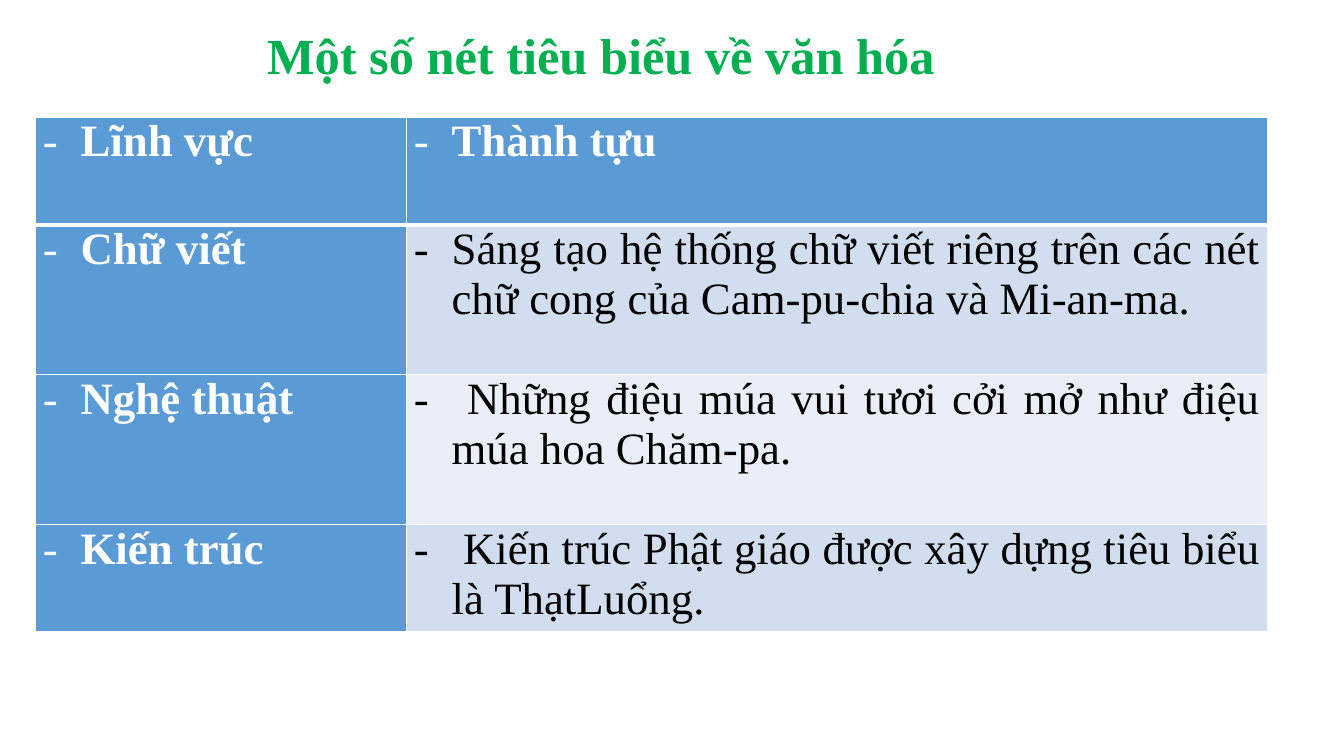
"""Build a slide with a table of cultural achievements."""
from lxml import etree
from pptx import Presentation
from pptx import util as u
from pptx.dml.color import RGBColor
from pptx.enum import text
from pptx.oxml import ns

GREEN = RGBColor(0x00, 0xB0, 0x50)
WHITE = RGBColor(0xFF, 0xFF, 0xFF)
BLACK = RGBColor(0x00, 0x00, 0x00)
BLUE = RGBColor(0x5B, 0x9B, 0xD5)
BANDS = (RGBColor(0xD2, 0xDE, 0xEF), RGBColor(0xEA, 0xEF, 0xF7))

TITLE = "Một số nét tiêu biểu về văn hóa"
ROWS = (
    ("Lĩnh vực", "Thành tựu"),
    ("Chữ viết", "Sáng tạo hệ thống chữ viết riêng trên các nét chữ cong của Cam-pu-chia và Mi-an-ma."),
    ("Nghệ thuật", " Những điệu múa vui tươi cởi mở như điệu múa hoa Chăm-pa."),
    ("Kiến trúc", " Kiến trúc Phật giáo được xây dựng tiêu biểu là ThạtLuổng."),
)
COLUMN_WIDTHS = (265, 615.6)
ROW_HEIGHTS = (77, 107, 107, 77)


class SlideBuilder:
    """Hold the style and the current slide."""

    font = "Times New Roman"
    title_size = 36
    table_size = 32
    indent = 27

    def __init__(self, deck):
        """Add a title-only slide to the deck."""
        self.page = deck.slides.add_slide(deck.slide_layouts[5])

    def span(self, para, words, size, color, bold):
        """Add one formatted run."""
        span = para.add_run()
        span.text = words
        span.font.name = self.font
        span.font.size = u.Pt(size)
        span.font.bold = bold
        span.font.color.rgb = color

    def title(self, words, left, top, width, height):
        """Place and format the title placeholder."""
        box = self.page.shapes.title
        box.left, box.top, box.width, box.height = map(u.Pt, (left, top, width, height))
        frame = box.text_frame
        frame.word_wrap = True
        frame.vertical_anchor = text.MSO_ANCHOR.MIDDLE
        para = frame.paragraphs[0]
        para.alignment = text.PP_ALIGN.LEFT
        para.line_spacing = 0.9
        self.span(para, words, self.title_size, GREEN, True)

    def bullet(self, para):
        """Give a paragraph a hanging dash."""
        props = para._p.get_or_add_pPr()
        props.set("marL", str(u.Pt(self.indent)))
        props.set("indent", str(u.Pt(-self.indent)))
        etree.SubElement(props, ns.qn("a:buFont"), typeface=self.font)
        etree.SubElement(props, ns.qn("a:buChar"), char="-")

    def borders(self, cell, top, bottom):
        """Draw white borders round a cell."""
        props = cell._tc.get_or_add_tcPr()
        for side, width in (("L", 1), ("R", 1), ("T", top), ("B", bottom)):
            line = etree.SubElement(props, ns.qn(f"a:ln{side}"), w=str(u.Pt(width)))
            fill = etree.SubElement(line, ns.qn("a:solidFill"))
            etree.SubElement(fill, ns.qn("a:srgbClr"), val=str(WHITE))

    def cell(self, cell, words, row, column):
        """Fill and format one table cell."""
        heading = row == 0 or column == 0
        self.borders(cell, 3 if row == 1 else 1, 3 if row == 0 else 1)
        cell.fill.solid()
        cell.fill.fore_color.rgb = BLUE if heading else BANDS[(row - 1) % 2]
        cell.margin_left = cell.margin_right = u.Pt(5.4)
        cell.margin_top = cell.margin_bottom = 0
        para = cell.text_frame.paragraphs[0]
        para.alignment = text.PP_ALIGN.JUSTIFY
        self.bullet(para)
        self.span(para, words, self.table_size, WHITE if heading else BLACK, heading)

    def table(self, rows, left, top, widths, heights):
        """Add a table with a heading row and column."""
        table = self.page.shapes.add_table(
            len(rows), len(widths), u.Pt(left), u.Pt(top), u.Pt(sum(widths)), u.Pt(sum(heights))
        ).table
        table.first_col = True
        for column, width in zip(table.columns, widths):
            column.width = u.Pt(width)
        for index, (entries, height) in enumerate(zip(rows, heights)):
            table.rows[index].height = u.Pt(height)
            for column, words in enumerate(entries):
                self.cell(table.cell(index, column), words, index, column)


def main():
    """Build and save the deck."""
    deck = Presentation()
    deck.slide_width, deck.slide_height = u.Pt(960), u.Pt(540)
    builder = SlideBuilder(deck)
    builder.title(TITLE, 183.6, 0, 638, 83.5)
    builder.table(ROWS, 25.2, 83.5, COLUMN_WIDTHS, ROW_HEIGHTS)
    deck.save("out.pptx")


if __name__ == "__main__":
    main()
